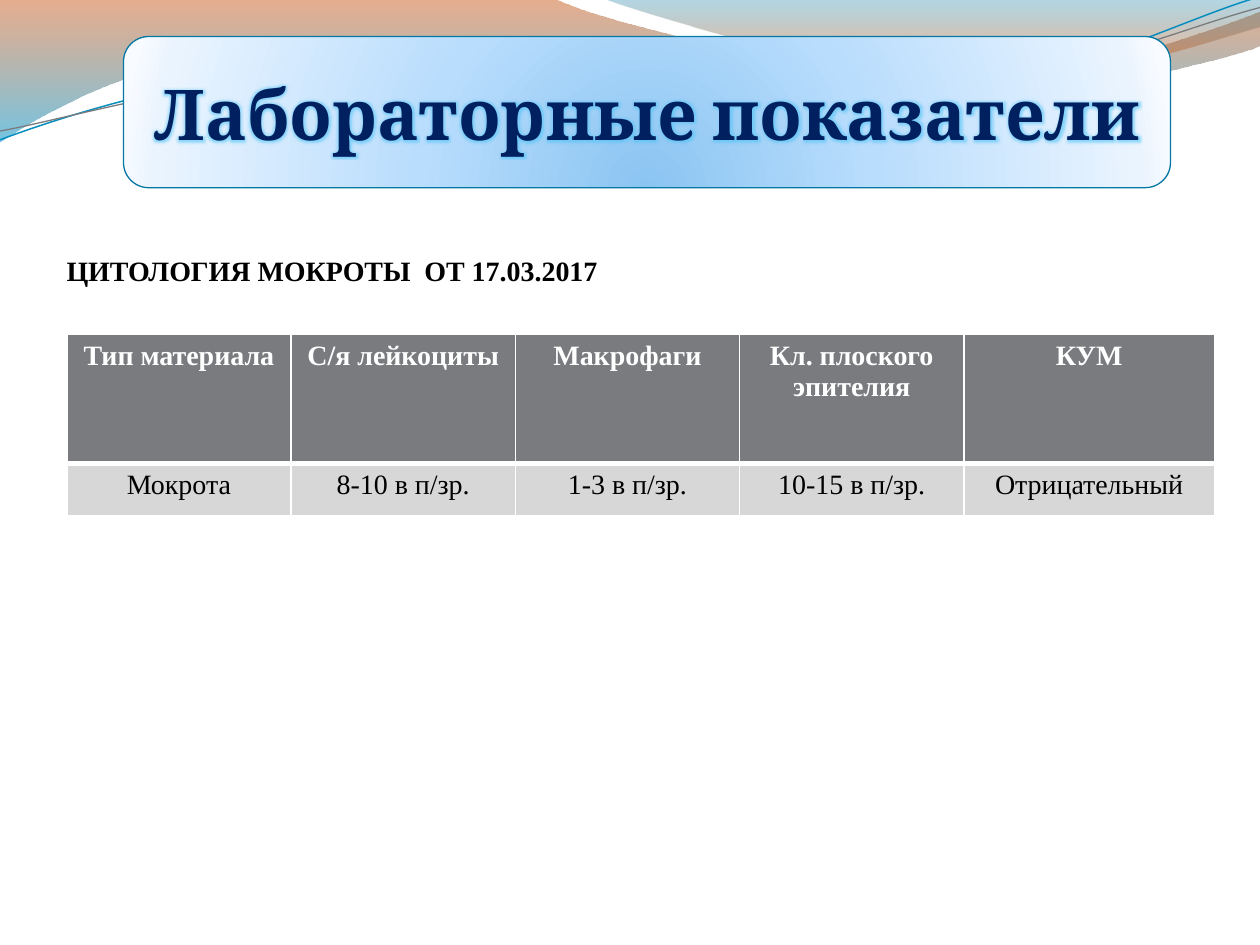
from dataclasses import dataclass

from lxml.etree import SubElement
from pptx import Presentation
from pptx.dml.color import RGBColor
from pptx.enum.shapes import MSO_SHAPE
from pptx.enum.text import MSO_ANCHOR, MSO_AUTO_SIZE, PP_ALIGN
from pptx.oxml import parse_xml
from pptx.oxml.ns import nsdecls, qn
from pptx.util import Inches, Pt

WIDTH, HEIGHT = 10, 7.5
COLUMN = 0.178 * WIDTH
COLUMNS = [COLUMN] * 4 + [1.99]
ROWS = [1.03, 0.41]
BLANK_LAYOUT = 6
UNITS = 1000  # outline units in an inch
COLORS = {
    "orange": "C94A04", "bright_orange": "F45700", "sky": "0095CC", "sea": "007AA6",
    "blue_line": "078EBF", "gray": "797B7E", "light_gray": "D7D7D8",
    "white": "FFFFFF", "black": "000000", "navy": "002060",
    "frame": "0478A3", "glow": "4FC3F7",
    "center": "8BC5F1", "inner": "B9DDFD", "outer": "EAF4FE", "edge": "F8FBFF",
}
RESULTS = [
    ["Тип материала", "С/я лейкоциты", "Макрофаги", "Кл. плоского эпителия", "КУМ"],
    ["Мокрота", "8-10 в п/зр.", "1-3 в п/зр.", "10-15 в п/зр.", "Отрицательный"],
]


@dataclass
class Stop:
    position: int
    color: str
    opacity: int = 100


@dataclass
class Wave:
    """An outline in inches: two numbers make a line, six make a Bézier curve."""
    start: tuple
    segments: list
    stops: tuple = ()
    line: str = ""
    line_width: float = 0


WAVES = [
    Wave((0, 0), [
        (4.4, -0.01), (4.76, 0.17, 6.64, 0.63, 7.58, 0.63),
        (8.53, 0.63, 9.58, 0.26, 10, 0.09), (10.01, 0.36),
        (9.83, 0.44, 8.7, 0.76, 7.46, 0.75), (6.22, 0.75, 3.82, 0.28, 2.57, 0.34),
        (1.29, 0.36, 0.46, 0.83, -0.01, 1.13),
    ], stops=(Stop(0, "orange", 45), Stop(100, "sky", 55))),
    Wave((4.79, -0.01), [
        (5.09, 0.11, 6.82, 0.62, 7.69, 0.65), (8.56, 0.69, 9.61, 0.32, 10, 0.21), (10, 0),
    ], stops=(Stop(0, "sea", 30), Stop(80, "bright_orange", 45))),
    Wave((0, 1.11), [
        (0.48, 0.93, 1.58, 0.57, 2.77, 0.52), (3.95, 0.47, 5.93, 0.89, 7.13, 0.8),
        (8.33, 0.71, 9.38, 0.15, 9.98, -0.02),
    ], line="blue_line", line_width=0.85),
    Wave((0, 1.04), [
        (0.47, 0.96, 1.64, 0.61, 2.83, 0.56), (4.03, 0.51, 5.97, 0.84, 7.17, 0.75),
        (8.36, 0.67, 9.41, 0.21, 10, 0.06),
    ], line="gray", line_width=0.75),
]


def rgb(name: str) -> RGBColor:
    return RGBColor.from_string(COLORS[name])


def gradient(stops: tuple, direction: str):
    marks = "".join(
        f'<a:gs pos="{s.position * 1000}"><a:srgbClr val="{COLORS[s.color]}">'
        f'<a:alpha val="{s.opacity * 1000}"/></a:srgbClr></a:gs>' for s in stops)
    return parse_xml(f'<a:gradFill {nsdecls("a")} rotWithShape="1">'
                     f'<a:gsLst>{marks}</a:gsLst>{direction}</a:gradFill>')


def bend_segments(outline, wave: Wave) -> None:
    """Give the straight segments of an outline their Bézier control points."""
    corners = [wave.start] + [segment[-2:] for segment in wave.segments]
    left, top = (min(values) for values in zip(*corners))
    straights = list(outline.element.spPr.iter(qn("a:lnTo")))
    for straight, segment in zip(straights, wave.segments):
        if len(segment) == 2:
            continue
        straight.tag = qn("a:cubicBezTo")
        straight.clear()
        for x, y in zip(segment[::2], segment[1::2]):
            SubElement(straight, qn("a:pt"), x=str(round((x - left) * UNITS)),
                       y=str(round((y - top) * UNITS)))


def draw_wave(slide, wave: Wave) -> None:
    def in_units(point: tuple) -> tuple:
        return tuple(round(value * UNITS) for value in point)

    builder = slide.shapes.build_freeform(*in_units(wave.start), scale=Inches(1) / UNITS)
    builder.add_line_segments([in_units(segment[-2:]) for segment in wave.segments],
                              close=bool(wave.stops))
    outline = builder.convert_to_shape()
    bend_segments(outline, wave)
    outline.shadow.inherit = False
    if wave.stops:
        outline.line.fill.background()
        geometry = outline.element.spPr.find(qn("a:custGeom"))
        geometry.addnext(gradient(wave.stops, '<a:lin ang="5400000" scaled="0"/>'))
    else:
        outline.fill.background()
        outline.line.color.rgb = rgb(wave.line)
        outline.line.width = Pt(wave.line_width)


def style_text(frame, font: str, size: int, color: str, bold: bool, align=None) -> None:
    for paragraph in frame.paragraphs:
        paragraph.alignment = align
        for run in paragraph.runs:
            run.font.name, run.font.size, run.font.bold = font, Pt(size), bold
            run.font.color.rgb = rgb(color)


def set_borders(cell, bottom_width: int) -> None:
    properties = cell._tc.get_or_add_tcPr()
    for index, side in enumerate(("lnL", "lnR", "lnT", "lnB")):
        width = Pt(bottom_width if side == "lnB" else 1)
        border = parse_xml(f'<a:{side} {nsdecls("a")} w="{width}"><a:solidFill>'
                           f'<a:srgbClr val="{COLORS["white"]}"/></a:solidFill></a:{side}>')
        properties.insert(index, border)


def draw_results(slide) -> None:
    table = slide.shapes.add_table(
        len(ROWS), len(COLUMNS), Inches(0.053 * WIDTH), Inches(2.65),
        Inches(sum(COLUMNS)), Inches(sum(ROWS))).table
    for column, width in zip(table.columns, COLUMNS):
        column.width = Inches(width)
    for index, (row, height) in enumerate(zip(table.rows, ROWS)):
        row.height = Inches(height)
        header = index == 0
        for cell, wording in zip(row.cells, RESULTS[index]):
            cell.text_frame.text = wording
            style_text(cell.text_frame, "Times New Roman", 16,
                       "white" if header else "black", header, PP_ALIGN.CENTER)
            cell.fill.solid()
            cell.fill.fore_color.rgb = rgb("gray" if header else "light_gray")
            set_borders(cell, 3 if header else 1)


def draw_study_name(slide) -> None:
    study = slide.shapes.add_textbox(Inches(0.043 * WIDTH), Inches(1.96),
                                     Inches(0.91 * WIDTH), Inches(0.37))
    study.text_frame.word_wrap = True
    study.text_frame.auto_size = MSO_AUTO_SIZE.SHAPE_TO_FIT_TEXT
    study.text_frame.text = "ЦИТОЛОГИЯ МОКРОТЫ  ОТ 17.03.2017"
    style_text(study.text_frame, "Times New Roman", 16, "black", True)


def draw_heading(slide) -> None:
    """Draw the rounded panel with a radial shade and glowing letters."""
    heading = slide.shapes.add_shape(
        MSO_SHAPE.ROUNDED_RECTANGLE, Inches(0.098 * WIDTH), Inches(0.29),
        Inches(0.831 * WIDTH), Inches(0.16 * HEIGHT))
    heading.shadow.inherit = False
    heading.line.color.rgb = rgb("frame")
    heading.line.width = Pt(0.75)
    heading.element.spPr.find(qn("a:prstGeom")).addnext(gradient(
        (Stop(0, "center"), Stop(43, "inner"), Stop(93, "outer"), Stop(100, "edge")),
        '<a:path path="circle"><a:fillToRect l="50000" t="130000" r="50000" b="-30000"/></a:path>'))
    frame = heading.text_frame
    frame.text = "Лабораторные показатели"
    frame.word_wrap = True
    frame.vertical_anchor = MSO_ANCHOR.MIDDLE
    style_text(frame, "Cambria", 40, "navy", True, PP_ALIGN.CENTER)
    letters = frame.paragraphs[0].runs[0].font
    letters._element.find(qn("a:solidFill")).addnext(parse_xml(
        f'<a:effectLst {nsdecls("a")}><a:glow rad="{Pt(4)}">'
        f'<a:srgbClr val="{COLORS["glow"]}"><a:alpha val="60000"/></a:srgbClr>'
        '</a:glow></a:effectLst>'))


def main() -> None:
    deck = Presentation()
    deck.slide_width, deck.slide_height = Inches(WIDTH), Inches(HEIGHT)
    slide = deck.slides.add_slide(deck.slide_layouts[BLANK_LAYOUT])
    for wave in WAVES:
        draw_wave(slide, wave)
    draw_results(slide)
    draw_study_name(slide)
    draw_heading(slide)
    deck.save("out.pptx")


if __name__ == "__main__":
    main()
